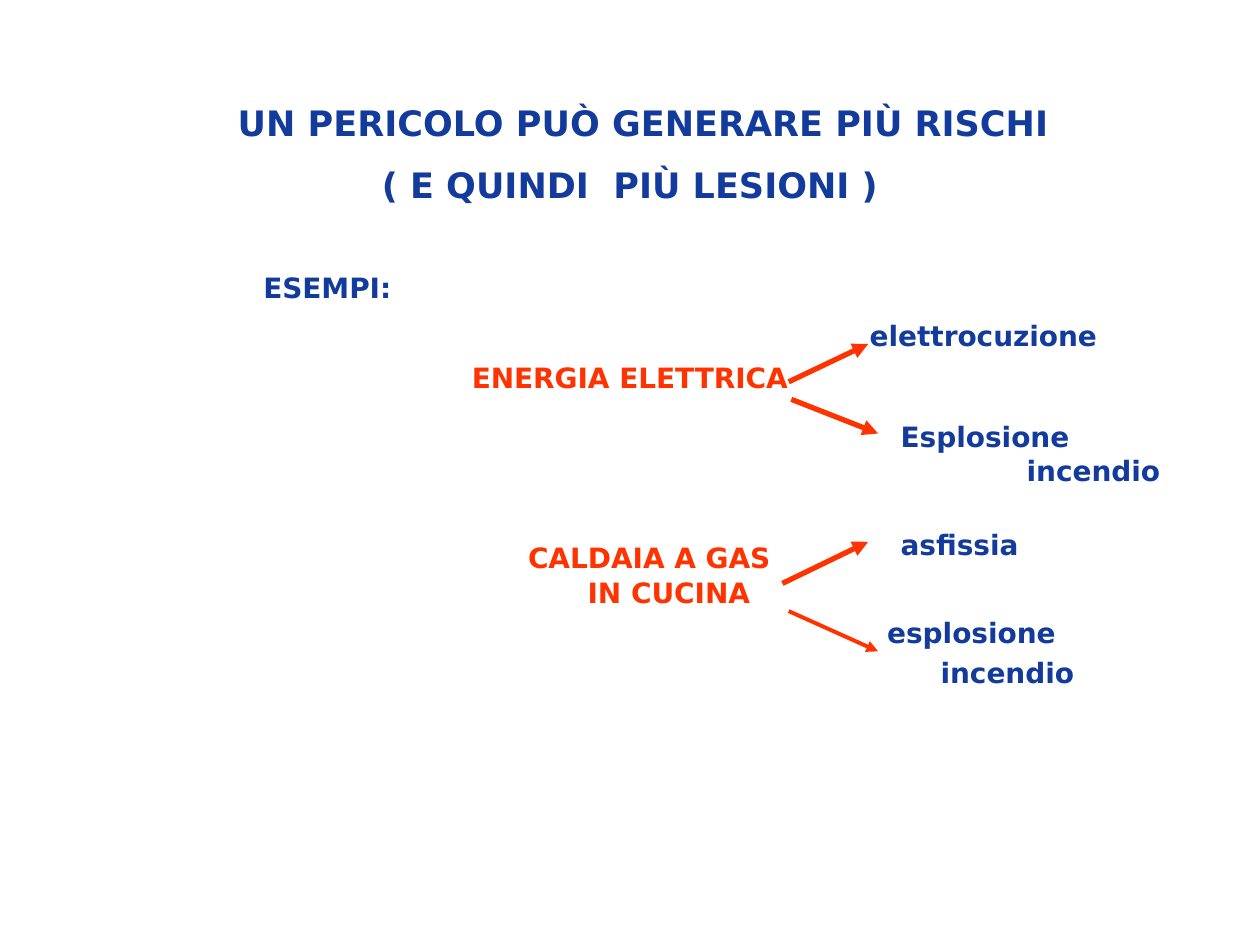
from lxml import etree
from pptx import Presentation
from pptx import util as u
from pptx.dml.color import RGBColor
from pptx.enum import shapes, text
from pptx.oxml import ns

BLUE, RED = "133B9C", "FF3300"
CENTER, LEFT = text.PP_ALIGN.CENTER, text.PP_ALIGN.LEFT

# wording, size, colour, alignment, left indent, space before
MAIN_LINES = [
    ("UN PERICOLO PUÒ GENERARE PIÙ RISCHI", 20, BLUE, CENTER, 15, 0),
    ("( E QUINDI  PIÙ LESIONI )", 20, BLUE, CENTER, 0, 11),
    ("ESEMPI:", 16, BLUE, LEFT, 144, 37.5),
    ("elettrocuzione", 16, BLUE, LEFT, 490.5, 8.3),
    ("ENERGIA ELETTRICA", 16, RED, CENTER, 0, 4.8),
    ("CALDAIA A GAS", 16, RED, CENTER, 22, 83.7),
    ("IN CUCINA", 16, RED, CENTER, 44.5, 0.6),
    ("esplosione", 16, BLUE, LEFT, 500.5, 3.7),
    ("incendio", 16, BLUE, LEFT, 531, 3.7),
]
ELECTRIC_LINES = [
    ("Esplosione", 16, BLUE, LEFT, 0, 0),
    ("incendio", 16, BLUE, LEFT, 72, 0),
]
GAS_LINES = [("asfissia", 16, BLUE, LEFT, 0, 0)]

RISK_ARROWS = [
    ((450.7, 218.2), (496.1, 196.6), 3),
    ((452.2, 228.2), (501.8, 247.7), 3),
    ((447.1, 333.4), (496.1, 309.6), 3),
    ((450.7, 349.2), (501.8, 372.2), 2.25),
]


def color(hex_value):
    """Return the colour for a hex string."""
    return RGBColor.from_string(hex_value)


def set_all(target, values):
    """Set every attribute in a dict of format values."""
    for name, value in values.items():
        setattr(target, name, value)


def add_lines(slide, box, lines, side_inset=7.2):
    """Add a text box with one formatted paragraph per line."""
    frame = slide.shapes.add_textbox(*map(u.Pt, box)).text_frame
    set_all(frame, {"word_wrap": True, "margin_left": u.Pt(side_inset),
                    "margin_right": u.Pt(side_inset)})
    for index, (wording, size, hue, align, indent, before) in enumerate(lines):
        line = frame.add_paragraph() if index else frame.paragraphs[0]
        line.text = wording
        set_all(line, {"alignment": align, "space_before": u.Pt(before)})
        line._p.get_or_add_pPr().set("marL", str(u.Pt(indent)))
        set_all(line.font, {"name": "DejaVu Sans", "size": u.Pt(size), "bold": True})
        line.font.color.rgb = color(hue)


def add_arrow(slide, start, end, width):
    """Add a red arrow from a hazard to a risk."""
    arrow = slide.shapes.add_connector(
        shapes.MSO_CONNECTOR.STRAIGHT, *map(u.Pt, start + end))
    arrow.line.color.rgb = color(RED)
    arrow.line.width = u.Pt(width)
    etree.SubElement(arrow.line._get_or_add_ln(), ns.qn("a:tailEnd"), type="triangle")
    etree.SubElement(arrow._element.spPr, ns.qn("a:effectLst"))


def main():
    """Build the slide on hazards and their risks."""
    deck = Presentation()
    set_all(deck, {"slide_width": u.Pt(720), "slide_height": u.Pt(540)})
    slide = deck.slides.add_slide(deck.slide_layouts[6])
    add_lines(slide, (0, 54.7, 720, 360.7), MAIN_LINES, 6.5)
    for start, end, width in RISK_ARROWS:
        add_arrow(slide, start, end, width)
    add_lines(slide, (507.6, 236.2, 212.4, 46), ELECTRIC_LINES)
    add_lines(slide, (507.6, 298.1, 212.4, 26.6), GAS_LINES)
    deck.save("out.pptx")


if __name__ == "__main__":
    main()
